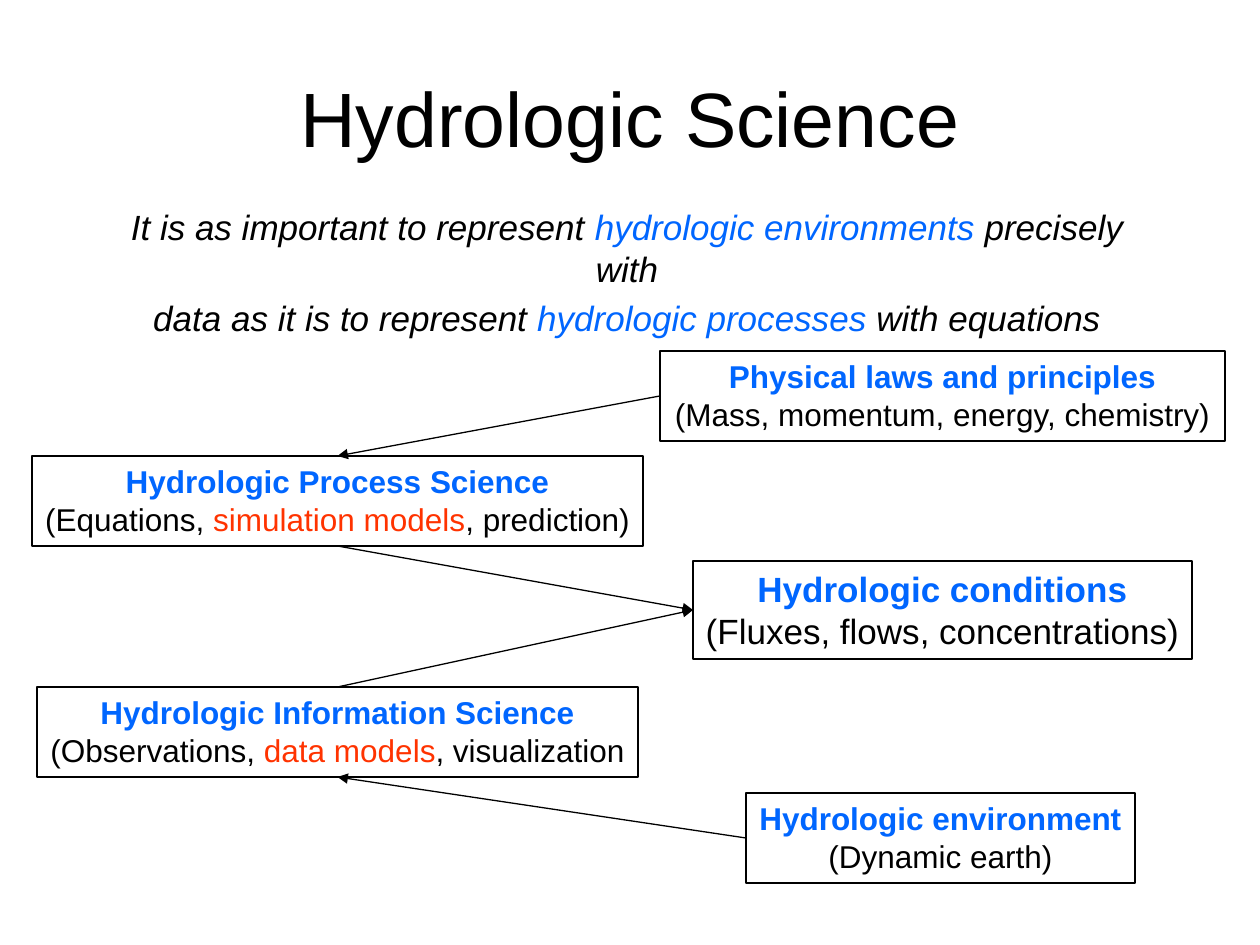
from lxml import etree
from pptx import Presentation
from pptx.dml.color import RGBColor
from pptx.enum.shapes import MSO_CONNECTOR, MSO_SHAPE
from pptx.enum.text import MSO_ANCHOR, PP_ALIGN
from pptx.oxml.ns import qn
from pptx.util import Emu, Pt

RECT = MSO_SHAPE.RECTANGLE
STRAIGHT = MSO_CONNECTOR.STRAIGHT
CENTER = PP_ALIGN.CENTER
TOP_ANCHOR, MIDDLE = MSO_ANCHOR.TOP, MSO_ANCHOR.MIDDLE
TOP, LEFT, BOTTOM = 0, 1, 2

PX_PER_INCH = 126
BLACK, BLUE, RED = "000000", "0066FF", "FF3300"


def px(n):
    return Emu(round(n * 914400 / PX_PER_INCH))


def rgb(value):
    return RGBColor.from_string(value)


class Deck:
    """Holds the style and the current slide."""
    font = "Arial"
    line_width = Pt(0.75)

    def __init__(self):
        self.prs = Presentation()
        self.prs.slide_width, self.prs.slide_height = px(1260), px(945)
        self.s = self.prs.slides.add_slide(self.prs.slide_layouts[5])

    def fill_text(self, tf, paragraphs, size, anchor=TOP_ANCHOR, wrap=True,
                  space=0, italic=False):
        """Each paragraph is a list of (text, colour, bold) runs."""
        tf.word_wrap, tf.vertical_anchor = wrap, anchor
        for i, runs in enumerate(paragraphs):
            p = tf.paragraphs[0] if i == 0 else tf.add_paragraph()
            p.alignment, p.space_before = CENTER, Pt(space)
            for text, colour, bold in runs:
                r = p.add_run()
                r.text = text
                style = {"name": self.font, "size": Pt(size),
                         "bold": bold, "italic": italic}
                for key, value in style.items():
                    setattr(r.font, key, value)
                r.font.color.rgb = rgb(colour)

    def title(self, text, x, y, w, h):
        sp = self.s.shapes.title
        sp.left, sp.top, sp.width, sp.height = map(px, (x, y, w, h))
        self.fill_text(sp.text_frame, [[plain(text)]], 44, MIDDLE)

    def statement(self, paragraphs, x, y, w, h):
        sp = self.s.shapes.add_textbox(*map(px, (x, y, w, h)))
        self.fill_text(sp.text_frame, paragraphs, 20, space=4, italic=True)

    def box(self, heading, detail, x, y, w, h=90, size=18):
        sp = self.s.shapes.add_shape(RECT, *map(px, (x, y, w, h)))
        sp.shadow.inherit = False
        sp.fill.background()
        sp.line.color.rgb = rgb(BLACK)
        sp.line.width = self.line_width
        self.fill_text(sp.text_frame, [[(heading, BLUE, True)], detail], size,
                       wrap=False)
        return sp

    def arrow(self, start, start_side, end, end_side):
        c = self.s.shapes.add_connector(STRAIGHT, 0, 0, 0, 0)
        c.begin_connect(start, start_side)
        c.end_connect(end, end_side)
        c.line.color.rgb = rgb(BLACK)
        c.line.width = self.line_width
        props = c.element.spPr
        etree.SubElement(props.find(qn("a:ln")), qn("a:tailEnd"), type="triangle")
        etree.SubElement(props, qn("a:effectLst"))


def plain(text):
    return (text, BLACK, False)


def main():
    deck = Deck()
    deck.title("Hydrologic Science", 63, 38, 1134, 158)

    # Boxes
    conditions = deck.box("Hydrologic conditions",
                          [plain("(Fluxes, flows, concentrations)")],
                          693, 561, 499, h=98, size=20)
    process = deck.box("Hydrologic Process Science",
                       [plain("(Equations, "), ("simulation models", RED, False),
                        plain(", prediction)")], 32, 456, 611)
    information = deck.box("Hydrologic Information Science",
                           [plain("(Observations, "), ("data models", RED, False),
                            plain(", visualization")], 37, 687, 601)
    environment = deck.box("Hydrologic environment", [plain("(Dynamic earth)")],
                           746, 793, 389)
    laws = deck.box("Physical laws and principles",
                    [plain("(Mass, momentum, energy, chemistry)")],
                    660, 351, 565)

    # Arrows
    deck.arrow(environment, LEFT, information, BOTTOM)
    deck.arrow(information, TOP, conditions, LEFT)
    deck.arrow(laws, LEFT, process, TOP)
    deck.arrow(process, BOTTOM, conditions, LEFT)

    # Statement under the title
    deck.statement([
        [plain("It is as important to represent "),
         ("hydrologic environments", BLUE, False), plain(" precisely with")],
        [plain("data as it is to represent "),
         ("hydrologic processes", BLUE, False), plain(" with equations")],
    ], 84, 199, 1086, 105)

    deck.prs.save("out.pptx")


if __name__ == "__main__":
    main()
